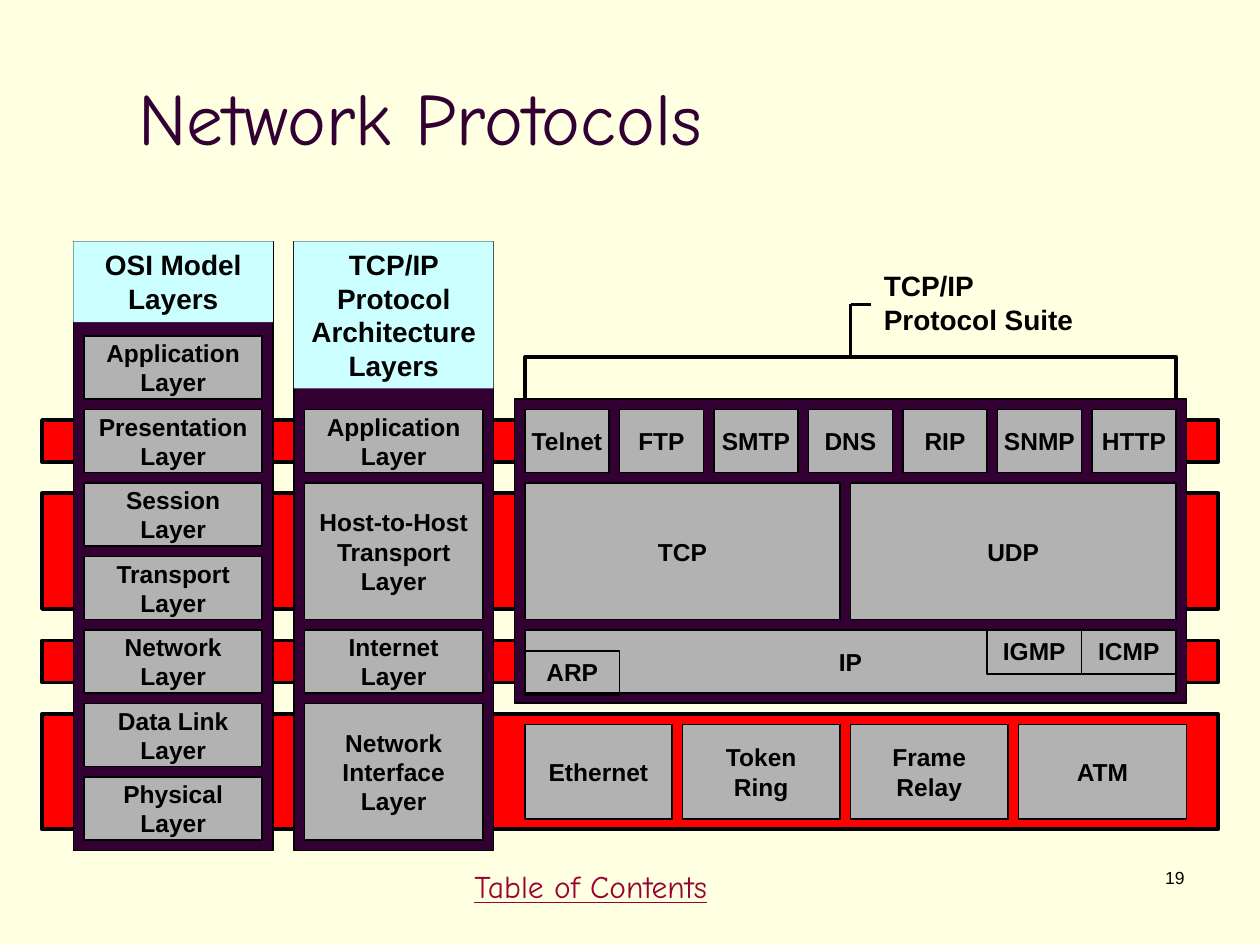
import pptx
import pptx.util
import pptx.dml.color
import pptx.enum.shapes
import pptx.enum.text
import pptx.oxml

ALIGN = pptx.enum.text.PP_ALIGN
ANCHOR = pptx.enum.text.MSO_ANCHOR
BLACK, RED, PLUM = "000000", "FF0000", "330033"
GREY, CYAN, CREAM, WINE = "B2B2B2", "CCFFFF", "FFFFE1", "990033"


def grid(*counts):
    """Turn counts of grid steps, twelve to the inch, into lengths."""
    return [pptx.util.Cm(count * 2.54 / 12) for count in counts]


def color(code):
    return pptx.dml.color.RGBColor.from_string(code)


def write(shape, text, size, face="Arial", ink=BLACK, bold=False,
          align=ALIGN.LEFT, anchor=ANCHOR.TOP, wrap=True):
    frame = shape.text_frame
    frame.text = text
    frame.word_wrap = wrap
    frame.auto_size = pptx.enum.text.MSO_AUTO_SIZE.NONE
    frame.vertical_anchor = anchor
    for line in frame.paragraphs:
        line.alignment = align
        line.font.size = pptx.util.Pt(size)
        line.font.name = face
        line.font.bold = bold
        line.font.color.rgb = color(ink)


def rect(slide, place, fill=None, width=1):
    """Add a black-edged box; no fill or a zero width leaves that part out."""
    kind = pptx.enum.shapes.MSO_SHAPE.RECTANGLE
    shape = slide.shapes.add_shape(kind, *grid(*place))
    shape.shadow.inherit = False
    if fill:
        shape.fill.solid()
        shape.fill.fore_color.rgb = color(fill)
    else:
        shape.fill.background()
    if width:
        shape.line.color.rgb = color(BLACK)
        shape.line.width = pptx.util.Pt(width)
    else:
        shape.line.fill.background()
    return shape


def block(slide, text, *place):
    write(rect(slide, place, GREY), text, 14, bold=True,
          align=ALIGN.CENTER, anchor=ANCHOR.MIDDLE, wrap=False)


def header(slide, text, *place):
    write(rect(slide, place, CYAN, 0), text, 16, bold=True,
          align=ALIGN.CENTER)


def inset(slide, text, left, top):
    write(rect(slide, (left, top, 9, 4.2)), text, 14, bold=True,
          align=ALIGN.CENTER)


def label(slide, text, place, size, **style):
    box = slide.shapes.add_textbox(*grid(*place))
    write(box, text, size, **style)
    return box


def stroke(slide, *ends):
    kind = pptx.enum.shapes.MSO_CONNECTOR.STRAIGHT
    line = slide.shapes.add_connector(kind, *grid(*ends))
    line.line.color.rgb = color(BLACK)
    line.line.width = pptx.util.Pt(2.25)
    space = pptx.oxml.ns.nsdecls("a")
    line._element.spPr.append(pptx.oxml.parse_xml(f"<a:effectLst {space}/>"))


def frames(slide):
    for top, height in ((47, 11), (61, 4), (68, 11), (40, 4)):
        rect(slide, (4, top, 112, height), RED, 2.25)
    rect(slide, (50, 34, 62, 7), width=2.25)
    rect(slide, (49, 38, 64, 29), PLUM)
    for left in (28, 7):
        rect(slide, (left, 23, 19, 58), PLUM)


def layers(slide):
    names = ("Application", "Presentation", "Session", "Transport",
             "Network", "Data Link", "Physical")
    for row, name in enumerate(names):
        block(slide, f"{name}\nLayer", 8, 32 + 7 * row, 17, 6)
    for name, top, height in (("Application", 39, 6),
                              ("Host-to-Host\nTransport", 46, 13),
                              ("Internet", 60, 6),
                              ("Network\nInterface", 67, 13)):
        block(slide, f"{name}\nLayer", 29, top, 17, height)
    header(slide, "OSI Model Layers", 7, 23, 19, 7.68)
    header(slide, "TCP/IP Protocol Architecture Layers", 28, 23, 19, 14)


def suite(slide):
    names = ("Telnet", "FTP", "SMTP", "DNS", "RIP", "SNMP", "HTTP")
    for col, name in enumerate(names):
        block(slide, name, 50 + 9 * col, 39, 8, 6)
    block(slide, "TCP", 50, 46, 30, 13)
    block(slide, "UDP", 81, 46, 31, 13)
    block(slide, "IP", 50, 60, 62, 6)
    for name, left, width in (("Ethernet", 50, 14), ("Token\nRing", 65, 15),
                              ("Frame\nRelay", 81, 15), ("ATM", 97, 16)):
        block(slide, name, left, 69, width, 9)
    inset(slide, "ARP", 50, 62)
    inset(slide, "ICMP", 103, 60)
    inset(slide, "IGMP", 94, 60)
    label(slide, "TCP/IP Protocol Suite", (83, 25, 22, 7.68), 16, bold=True)
    stroke(slide, 81, 34, 81, 29)
    stroke(slide, 81, 29, 83, 29)


def main():
    deck = pptx.Presentation()
    deck.slide_width, deck.slide_height = grid(120, 90)
    slide = deck.slides.add_slide(deck.slide_layouts[5])
    slide.background.fill.solid()
    slide.background.fill.fore_color.rgb = color(CREAM)

    title = slide.shapes.title
    title.left, title.top, title.width, title.height = grid(12, 3.6, 102, 15)
    write(title, "Network Protocols", 42, "Comic Neue", PLUM,
          anchor=ANCHOR.MIDDLE)
    label(slide, "19", (89, 82, 25, 6), 10, align=ALIGN.RIGHT)
    link = label(slide, "Table of Contents", (44, 82, 39, 6), 18,
                 face="Comic Neue", ink=WINE)
    link.text_frame.paragraphs[0].font.underline = True

    frames(slide)
    layers(slide)
    suite(slide)
    deck.save("out.pptx")


if __name__ == "__main__":
    main()
